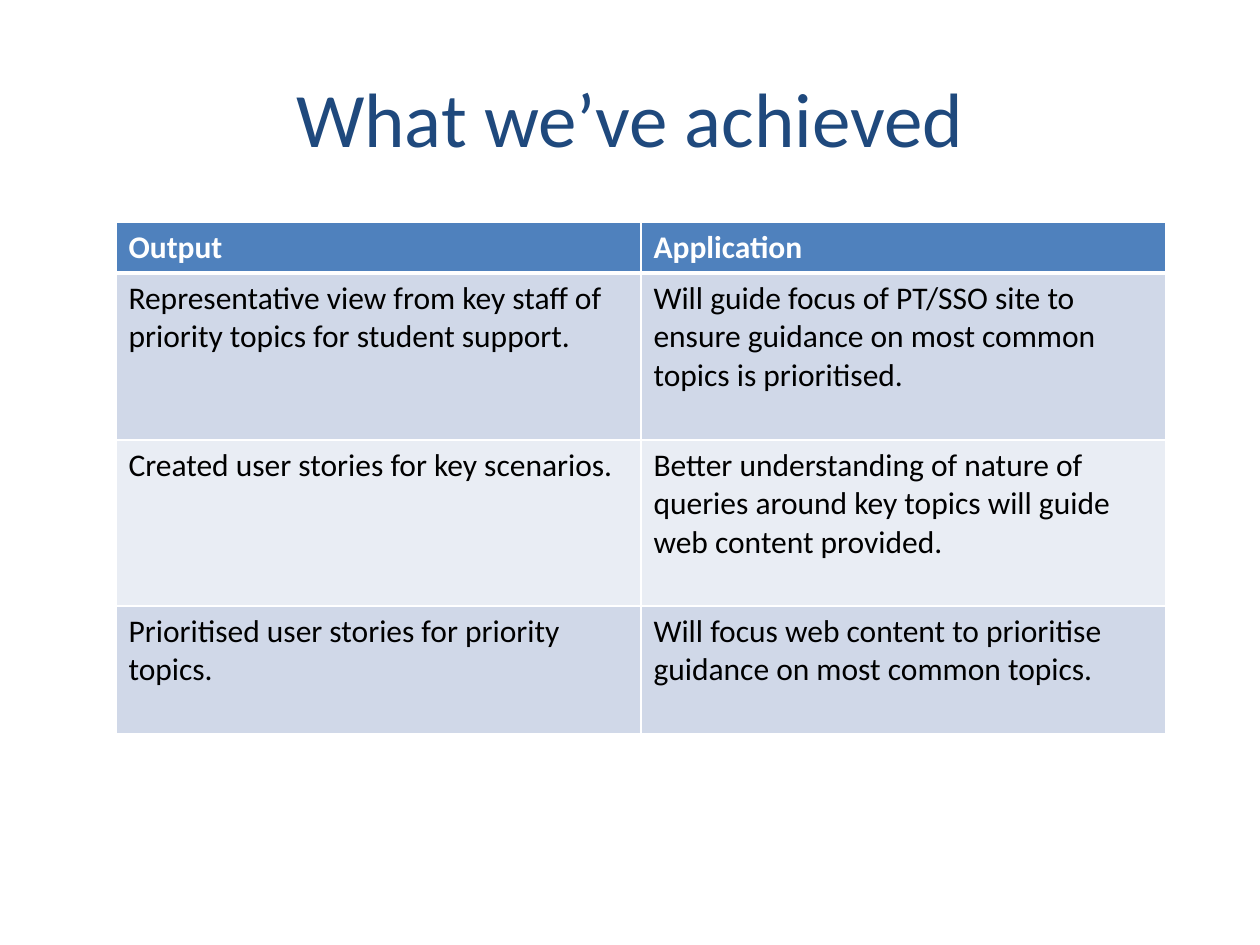
import pptx
import pptx.dml.color
import pptx.enum.text
import pptx.oxml.ns
import pptx.util
from lxml import etree

RGBColor = pptx.dml.color.RGBColor
NAVY = RGBColor(0x1F, 0x49, 0x7D)
BLUE = RGBColor(0x4F, 0x81, 0xBD)
BAND_DARK = RGBColor(0xD0, 0xD8, 0xE8)
BAND_LIGHT = RGBColor(0xE9, 0xED, 0xF4)
WHITE = RGBColor(0xFF, 0xFF, 0xFF)
BLACK = RGBColor(0, 0, 0)

FONT = "Calibri"
PX_PER_INCH = 126
SLIDE_SIZE = (1260, 945)
TITLE_BOX = (63, 38, 1134, 158)
TABLE_BOX = (116, 222, 1050, 512)
ROW_HEIGHTS = (51, 167, 166, 128)

ROWS = (
    ("Output", "Application"),
    ("Representative view from key staff of priority topics for student support.",
     "Will guide focus of PT/SSO site to ensure guidance on most common topics is prioritised."),
    ("Created user stories for key scenarios.",
     "Better understanding of nature of queries around key topics will guide web content provided."),
    ("Prioritised user stories for priority topics.",
     "Will focus web content to prioritise guidance on most common topics."),
)


def px(length):
    return pptx.util.Emu(round(length * 914400 / PX_PER_INCH))


def style_paragraph(paragraph, size, color, bold=False):
    font = paragraph.font
    font.name = FONT
    font.size = pptx.util.Pt(size)
    font.bold = bold
    font.color.rgb = color


def add_borders(cell, widths):
    """Draw white cell borders; widths maps each side to points."""
    properties = cell._tc.get_or_add_tcPr()
    for side, width in widths.items():
        line = etree.SubElement(properties, pptx.oxml.ns.qn(f"a:ln{side}"),
                                w=str(pptx.util.Pt(width)))
        fill = etree.SubElement(line, pptx.oxml.ns.qn("a:solidFill"))
        etree.SubElement(fill, pptx.oxml.ns.qn("a:srgbClr"), val=str(WHITE))


def add_title(slide, box, text):
    title = slide.shapes.title
    title.left, title.top, title.width, title.height = map(px, box)
    frame = title.text_frame
    frame.text = text
    frame.vertical_anchor = pptx.enum.text.MSO_ANCHOR.MIDDLE
    paragraph = frame.paragraphs[0]
    paragraph.alignment = pptx.enum.text.PP_ALIGN.CENTER
    style_paragraph(paragraph, 44, NAVY)


def add_output_table(slide, box, rows, row_heights):
    columns = len(rows[0])
    table = slide.shapes.add_table(len(rows), columns, *map(px, box)).table
    for column in table.columns:
        column.width = px(box[2] / columns)
    for index, (texts, height) in enumerate(zip(rows, row_heights)):
        table.rows[index].height = px(height)
        is_header = index == 0
        fill = BLUE if is_header else (BAND_LIGHT, BAND_DARK)[index % 2]
        widths = {"L": 1, "R": 1, "T": 3 if index == 1 else 1, "B": 3 if is_header else 1}
        for cell, text in zip(table.rows[index].cells, texts):
            cell.text = text
            style_paragraph(cell.text_frame.paragraphs[0], 18,
                            WHITE if is_header else BLACK, is_header)
            add_borders(cell, widths)
            cell.fill.solid()
            cell.fill.fore_color.rgb = fill


def main():
    presentation = pptx.Presentation()
    presentation.slide_width, presentation.slide_height = map(px, SLIDE_SIZE)
    title_only = presentation.slide_layouts[5]
    slide = presentation.slides.add_slide(title_only)
    add_title(slide, TITLE_BOX, "What we’ve achieved")
    add_output_table(slide, TABLE_BOX, ROWS, ROW_HEIGHTS)
    presentation.save("out.pptx")


if __name__ == "__main__":
    main()
